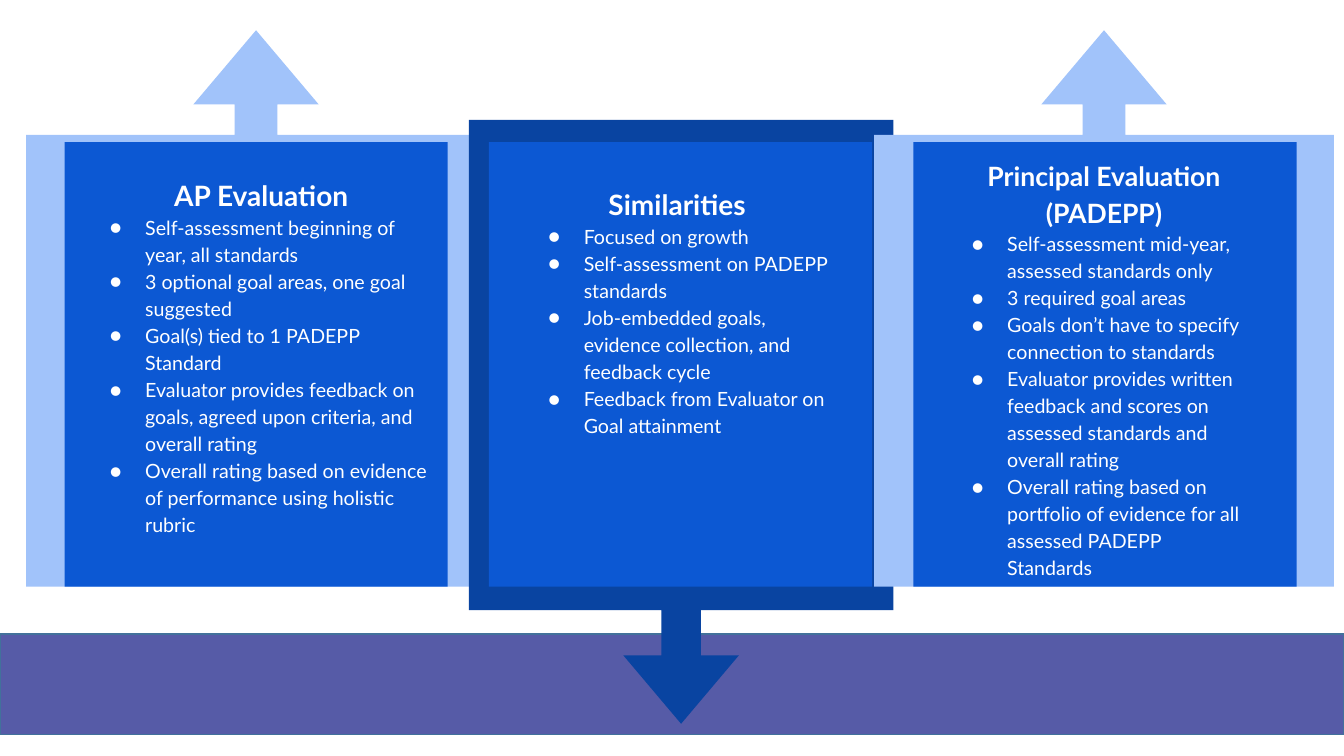
"""Build a slide comparing AP and principal evaluations, with their similarities."""
from lxml import etree
from pptx import Presentation
from pptx import util as u
from pptx.dml.color import RGBColor
from pptx.enum import shapes, text
from pptx.oxml.ns import qn


def add_block(preset, box, colour, adjustments=()):
    block = slide.shapes.add_shape(preset, *[u.Inches(length) for length in box])
    block.shadow.inherit = False
    block.fill.solid()
    block.fill.fore_color.rgb = RGBColor.from_string(colour)
    block.line.fill.background()
    for index, value in enumerate(adjustments):
        block.adjustments[index] = value
    return block


def format_paragraph(paragraph, size, bulleted):
    paragraph.line_spacing = 1.15
    paragraph.space_before = paragraph.space_after = u.Pt(0)
    paragraph.alignment = text.PP_ALIGN.LEFT if bulleted else text.PP_ALIGN.CENTER
    properties = paragraph._p.get_or_add_pPr()
    properties.set("marL", str(u.Inches(0.5 if bulleted else 0)))
    properties.set("indent", str(u.Inches(-0.35 if bulleted else 0)))
    if bulleted:
        bullet_colour = etree.SubElement(properties, qn("a:buClr"))
        etree.SubElement(bullet_colour, qn("a:srgbClr"), val="FFFFFF")
        etree.SubElement(properties, qn("a:buFont"), typeface="Lato")
        etree.SubElement(properties, qn("a:buChar"), char="●")
    else:
        etree.SubElement(properties, qn("a:buNone"))
    for run in paragraph.runs:
        run.font.name = "Lato"
        run.font.size = u.Pt(size)
        run.font.bold = not bulleted
        run.font.color.rgb = RGBColor.from_string("FFFFFF")


columns = [
    dict(
        heading="AP Evaluation ", size=20, colour="A1C3FA", turn=270,
        callout=(-0.22, 0.78, 5.52, 4.56), panel_left=0.64, body=(0.81, 1.59, 3.63, 3.77),
        points=[
            "Self-assessment beginning of year, all standards",
            "3 optional goal areas, one goal suggested",
            "Goal(s) tied to 1 PADEPP Standard",
            "Evaluator provides feedback on goals, agreed upon criteria, and overall rating",
            "Overall rating based on evidence of performance using holistic rubric",
        ],
    ),
    dict(
        heading="Similarities ", size=20, colour="0944A1", turn=90,
        callout=(3.76, 2.08, 5.99, 4.21), panel_left=4.85, body=(5.16, 1.68, 3.18, 3.68),
        points=[
            "Focused on growth",
            "Self-assessment on PADEPP standards",
            "Job-embedded goals, evidence collection, and feedback cycle",
            "Feedback from Evaluator on Goal attainment",
        ],
    ),
    dict(
        heading="Principal Evaluation (PADEPP)", size=19, colour="A1C3FA", turn=270,
        callout=(8.19, 0.78, 5.52, 4.56), panel_left=9.06, body=(9.36, 1.41, 3.18, 3.49),
        points=[
            "Self-assessment mid-year, assessed standards only",
            "3 required goal areas",
            "Goals don’t have to specify connection to standards",
            "Evaluator provides written feedback and scores on assessed standards and overall rating",
            "Overall rating based on portfolio of evidence for all assessed PADEPP Standards",
        ],
    ),
]

deck = Presentation()
deck.slide_width, deck.slide_height = u.Inches(13.33), u.Inches(7.5)
slide = deck.slides.add_slide(deck.slide_layouts.get_by_name("Comparison"))
unused_title, *bodies, unused_body = list(slide.placeholders)
for unused in (unused_title, unused_body):
    slide.shapes.element.remove(unused.element)

band = add_block(shapes.MSO_SHAPE.RECTANGLE, (0, 6.29, 13.33, 1), "565BA7")
band.line.color.rgb = RGBColor.from_string("42719B")
band.line.width = u.Pt(1)

for column, body in zip(columns, bodies):
    callout = add_block(shapes.MSO_SHAPE.RIGHT_ARROW_CALLOUT, column["callout"],
                        column["colour"], (0.093, 0.136, 0.161, 0.812))
    callout.rotation = column["turn"]
    add_block(shapes.MSO_SHAPE.SNIP_1_RECTANGLE,
              (column["panel_left"], 1.41, 3.8, 4.41), "0C58D3", (0,))

    slide.shapes.element.append(body.element)
    body.left, body.top, body.width, body.height = [u.Inches(n) for n in column["body"]]
    frame = body.text_frame
    frame.word_wrap = True
    frame.auto_size = text.MSO_AUTO_SIZE.NONE
    frame.vertical_anchor = text.MSO_ANCHOR.TOP
    frame.margin_left = frame.margin_right = u.Inches(0.13)
    frame.margin_top = frame.margin_bottom = u.Inches(0.13)
    frame.text = "\n".join([column["heading"], *column["points"]])
    heading, *points = frame.paragraphs
    format_paragraph(heading, column["size"], False)
    for point in points:
        format_paragraph(point, 14, True)

deck.save("out.pptx")
